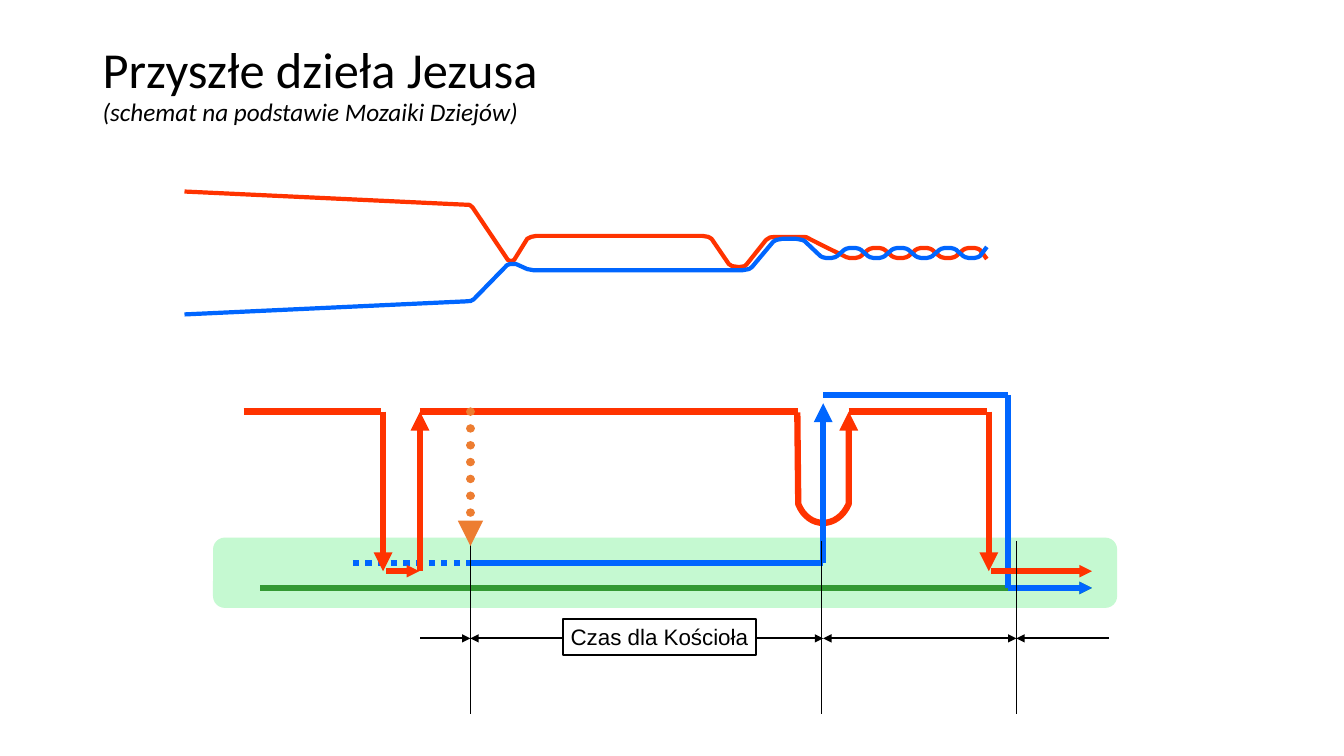
from lxml.etree import SubElement
from pptx import Presentation
from pptx.dml.color import RGBColor
from pptx.enum.dml import MSO_LINE
from pptx.enum.shapes import MSO_CONNECTOR, MSO_SHAPE as SHAPE
from pptx.enum.text import MSO_ANCHOR, MSO_AUTO_SIZE, PP_ALIGN
from pptx.oxml.ns import qn
from pptx.util import Pt

RED = RGBColor(0xFF, 0x33, 0x00)
BLUE = RGBColor(0x00, 0x66, 0xFF)
GREEN = RGBColor(0x33, 0x99, 0x33)
ORANGE = RGBColor(0xED, 0x7D, 0x31)
MINT = RGBColor(0xC5, 0xF9, 0xD1)
BLACK = RGBColor(0x00, 0x00, 0x00)


def style_line(sp, color, width, ends="", size="med"):
    sp.line.color.rgb = color
    sp.line.width = Pt(width)
    ln = sp.line._get_or_add_ln()
    for end in ("head", "tail"):
        if end in ends:
            SubElement(ln, qn(f"a:{end}End"), type="triangle", w=size, len=size)


def add_path(points, color, width, ends=""):
    pts = [(Pt(x), Pt(y)) for x, y in points]
    fb = s.shapes.build_freeform(*pts[0], scale=1.0)
    fb.add_line_segments(pts[1:], close=False)
    sp = fb.convert_to_shape()
    sp.fill.background()
    sp.shadow.inherit = False
    style_line(sp, color, width, ends)


prs = Presentation()
prs.slide_width, prs.slide_height = Pt(960), Pt(540)
s = prs.slides.add_slide(prs.slide_layouts[6])

sp = s.shapes.add_shape(SHAPE.ROUNDED_RECTANGLE, Pt(152.2), Pt(384), Pt(645.8), Pt(50.2))
sp.adjustments[0] = 0.167
sp.shadow.inherit = False
sp.fill.solid()
sp.fill.fore_color.rgb = MINT
sp.line.fill.background()

tf = s.shapes.add_textbox(Pt(66.2), Pt(28.6), Pt(828), Pt(56)).text_frame
tf.word_wrap = True
p = tf.paragraphs[0]
p.line_spacing = 0.9
for text, size, italic in (("Przyszłe dzieła Jezusa", 36, False),
                           ("(schemat na podstawie Mozaiki Dziejów)", 18, True)):
    if p.runs:
        p.add_line_break()
    r = p.add_run()
    r.text = text
    r.font.name = "Calibri"
    r.font.size = Pt(size)
    r.font.italic = italic
    r.font.color.rgb = BLACK

loop = [(569.5, 294.5)]
for i in range(17):
    t = i / 16
    x = 570.2 * (1 - t)**3 + 3 * 577.4 * t * (1 - t)**2 + 3 * 598.3 * t**2 * (1 - t) + 606.2 * t**3
    loop.append((x, 360 + 54 * t * (1 - t)))
loop.append((606.2, 294))
add_path(loop, RED, 4.5, "tail")

lines = [
    (RED, 4.5, 300, 294, 570, 294, "", "med"),
    (BLUE, 4.5, 336, 402, 588, 402, "", "med"),
    (GREEN, 4.5, 186, 420, 780, 420, "tail", "sm"),
    (BLUE, 4.5, 588, 282, 720, 282, "", "med"),
    (BLUE, 4.5, 588, 402, 588, 288, "tail", "med"),
    (BLUE, 4.5, 252, 402, 336, 402, "dots", "med"),
    (RED, 4.5, 706.3, 294, 706.3, 408, "tail", "med"),
    (RED, 4.5, 606.2, 294, 705, 294, "", "med"),
    (BLUE, 4.5, 720, 282, 720, 420, "", "med"),
    (RED, 4.5, 708, 408, 780, 408, "tail", "sm"),
    (BLUE, 4.5, 720, 420, 780, 420, "tail", "sm"),
    (RED, 4.5, 273.6, 294, 273.6, 408, "tail", "med"),
    (RED, 4.5, 174, 294, 272.4, 294, "", "med"),
    (RED, 4.5, 276, 408, 299.5, 408, "tail", "sm"),
    (RED, 4.5, 300, 408, 300, 294, "tail", "med"),
]
for x in (336, 587, 726):
    lines.append((BLACK, 0.5, x, 386.6, x, 510, "", "med"))
for x1, x2, ends in ((336, 402, "head"), (588, 540, "head"), (336, 300, "head"),
                     (588, 726, "head tail"), (726, 792, "head")):
    lines.append((BLACK, 1.5, x1, 456, x2, 456, ends, "med"))
lines.append((ORANGE, 6, 336, 294, 336, 390, "round dots tail", "med"))

for color, width, x1, y1, x2, y2, look, size in lines:
    sp = s.shapes.add_connector(MSO_CONNECTOR.STRAIGHT, Pt(x1), Pt(y1), Pt(x2), Pt(y2))
    style_line(sp, color, width, look, size)
    if "dots" in look:
        sp.line.dash_style = MSO_LINE.ROUND_DOT
    if "round" in look:
        sp.line._get_or_add_ln().set("cap", "rnd")
    SubElement(sp._element.spPr, qn("a:effectLst"))

sp = s.shapes.add_shape(SHAPE.RECTANGLE, Pt(402), Pt(442.4), Pt(138), Pt(25.2))
sp.shadow.inherit = False
sp.fill.background()
style_line(sp, BLACK, 1.5)
tf = sp.text_frame
tf.margin_left = tf.margin_right = tf.margin_top = tf.margin_bottom = Pt(2.9)
tf.vertical_anchor = MSO_ANCHOR.MIDDLE
tf.word_wrap = False
tf.auto_size = MSO_AUTO_SIZE.SHAPE_TO_FIT_TEXT
p = tf.paragraphs[0]
p.alignment = PP_ALIGN.CENTER
r = p.add_run()
r.text = "Czas dla Kościoła"
r.font.name = "Arial"
r.font.size = Pt(16)
r.font.color.rgb = BLACK

red_wave = [
    (131.8, 136.8), (331.9, 146.2), (334.8, 146.2), (336.2, 146.9), (337.7, 148.3),
    (362.9, 185.8), (365, 186.5), (367.2, 185.8), (376.6, 170.6), (379.4, 169.2),
    (383, 168.5), (501.8, 168.5), (506, 169.2), (508.3, 170.6), (520.6, 188.6),
    (523, 190.1), (528, 190.8), (532, 190.1), (533.5, 188.6), (547.2, 171.4),
    (550, 169.6), (553.7, 169.2), (573.1, 169.2), (576, 169.4), (578.2, 170.6),
    (589.7, 176.4),
]
blue_wave = [
    (131.8, 224.6), (332.6, 215.3), (336.2, 215), (338.4, 213.8), (362.2, 189.4),
    (364.3, 188.6), (368.6, 188.6), (376.6, 192.2), (380.9, 193), (530.6, 193),
    (535, 192.2), (537.1, 190.8), (552.2, 172.8), (554.4, 171.4), (558.7, 170.6),
    (568.8, 170.6), (573, 171.4), (574.6, 172.1),
]
bulge = [(0, 2.2), (1.5, 3), (4, 3.6), (8, 3.6), (10.5, 3), (12, 2.2)]
for wave, color, first, end_y in ((red_wave, RED, 1, 185), (blue_wave, BLUE, 0, 176.4)):
    for k in range(first, 7):
        side = 1 if (k - first) % 2 == 0 else -1
        wave += [(586 + 17 * k + dx, 180.7 + side * dy) for dx, dy in bulge]
    add_path(wave + [(704.9, end_y)], color, 3)

prs.save("out.pptx")
